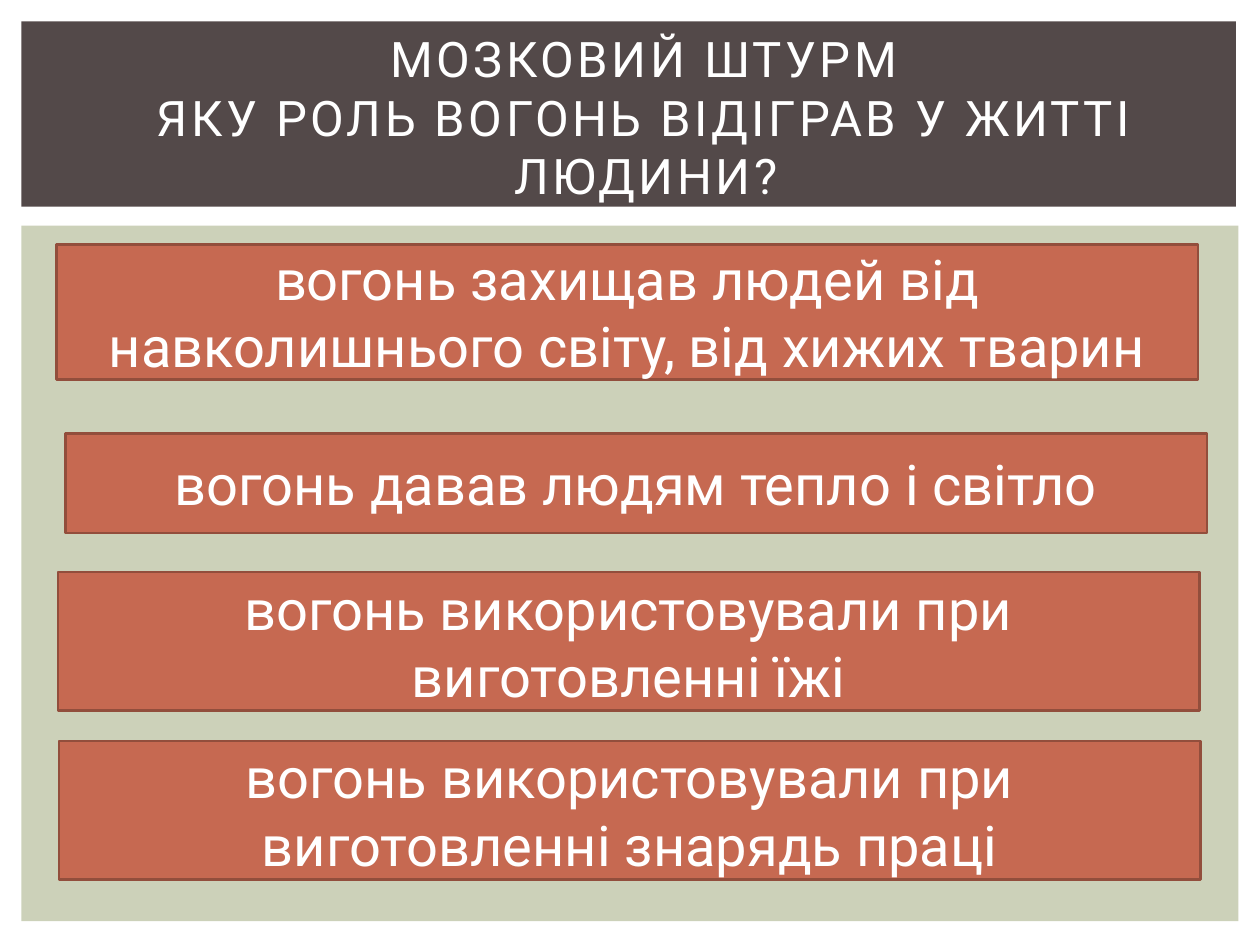
from pptx import Presentation
from pptx.dml.color import RGBColor
from pptx.enum import shapes, text
from pptx.util import Inches, Pt

WHITE = RGBColor(0xFF, 0xFF, 0xFF)
SAGE = RGBColor(0xCC, 0xD1, 0xB9)
DARK_BROWN = RGBColor(0x53, 0x49, 0x49)
TERRACOTTA = RGBColor(0xC6, 0x69, 0x51)
RUST = RGBColor(0x92, 0x4E, 0x3C)

presentation = Presentation()
presentation.slide_width = Inches(10)
presentation.slide_height = Inches(7.5)
slide = presentation.slides.add_slide(presentation.slide_layouts[6])


def add_box(left, top, width, height, fill):
    shape = slide.shapes.add_shape(
        shapes.MSO_SHAPE.RECTANGLE,
        Inches(left), Inches(top), Inches(width), Inches(height))
    shape.shadow.inherit = False
    shape.fill.solid()
    shape.fill.fore_color.rgb = fill
    shape.line.fill.background()
    return shape


def write_centered(shape, wording, size):
    frame = shape.text_frame
    frame.word_wrap = True
    frame.vertical_anchor = text.MSO_ANCHOR.MIDDLE
    frame.text = wording
    paragraph = frame.paragraphs[0]
    paragraph.alignment = text.PP_ALIGN.CENTER
    for run in paragraph.runs:
        run.font.name = "Roboto"
        run.font.size = Pt(size)
        run.font.color.rgb = WHITE
    return paragraph


# Background panels
add_box(0.17, 1.79, 9.66, 5.52, SAGE)
add_box(0.17, 0.17, 9.64, 1.47, DARK_BROWN)

# Title with widely spaced letters
title = slide.shapes.add_textbox(Inches(0.54), Inches(0.19), Inches(9.17), Inches(1.47))
title_paragraph = write_centered(
    title, "МОЗКОВИЙ ШТУРМ\vЯКУ РОЛЬ ВОГОНЬ ВІДІГРАВ У ЖИТТІ ЛЮДИНИ?", 28)
for run in title_paragraph.runs:
    run.font._element.set("spc", "200")

# Answers: left, top, height, wording
answers = [
    (0.45, 1.94, 1.07, "вогонь захищав людей від навколишнього світу, від хижих тварин"),
    (0.52, 3.44, 0.79, "вогонь давав людям тепло і світло"),
    (0.46, 4.54, 1.1, "вогонь використовували при виготовленні їжі"),
    (0.47, 5.88, 1.1, "вогонь використовували при виготовленні знарядь праці"),
]
for left, top, height, wording in answers:
    answer = add_box(left, top, 9.06, height, TERRACOTTA)
    answer.line.color.rgb = RUST
    answer.line.width = Pt(1.5)
    write_centered(answer, wording, 32)

presentation.save("out.pptx")
